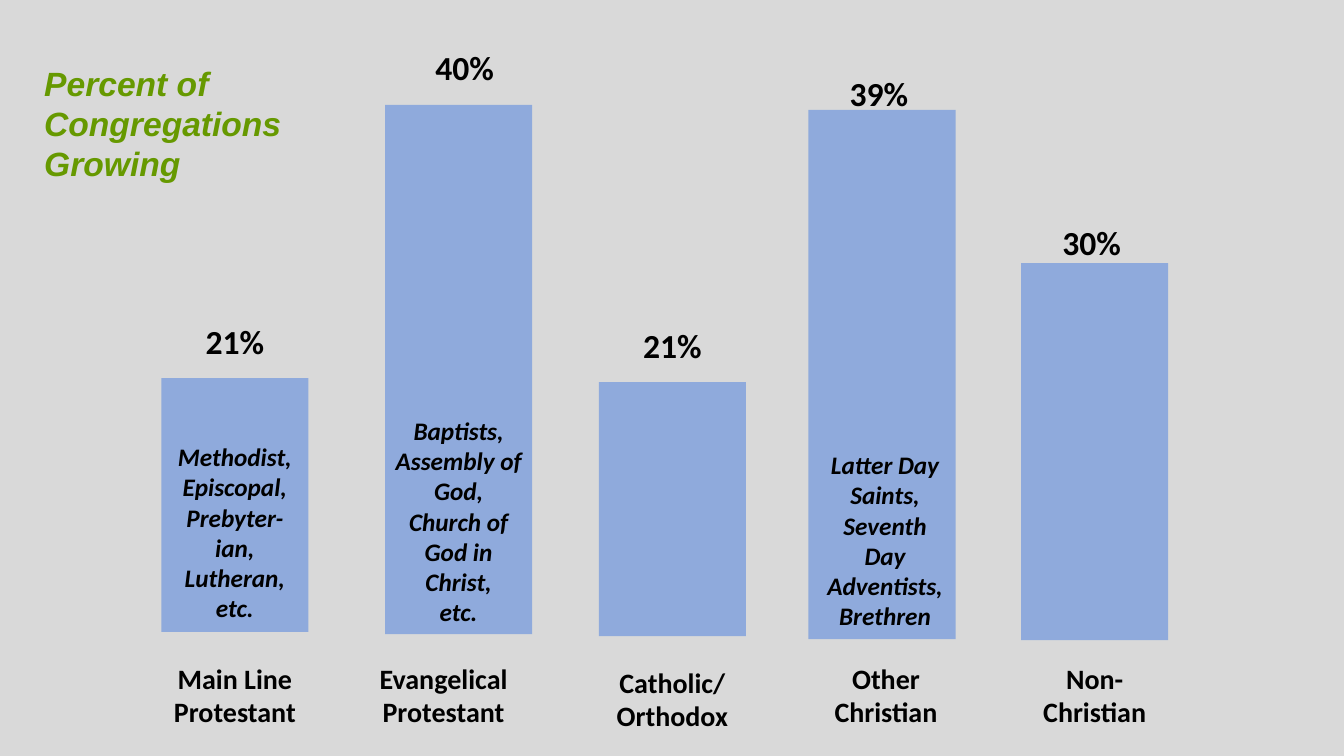
from dataclasses import dataclass

from pptx import Presentation
from pptx.dml.color import RGBColor
from pptx.enum.shapes import MSO_SHAPE as Shape
from pptx.enum.text import MSO_ANCHOR as Anchor, PP_ALIGN as Align
from pptx.util import Inches, Pt


@dataclass(frozen=True)
class Theme:
    page: str = "D9D9D9"
    bar: str = "8FAADC"
    title: str = "669900"
    ink: str = "000000"
    body_font: str = "Calibri"
    title_font: str = "Arial"
    large: int = 24
    medium: int = 20
    small: int = 18


@dataclass(frozen=True)
class Box:
    """Left, width in columns; top, height in rows."""
    left: float
    top: float
    width: float
    height: float

    def emu(self):
        return (round(self.left * COLUMN), round(self.top * ROW),
                round(self.width * COLUMN), round(self.height * ROW))


@dataclass(frozen=True)
class Group:
    """A bar with its value, name and member churches; shifts are in columns."""
    value: str
    name: tuple
    bar: Box
    value_shift: float = 0
    value_rise: float = 2.48
    name_shift: float = 0
    name_top: float = 26.04
    name_width: float = 4.38
    members: tuple = ()
    members_shift: float = 0
    members_lift: float = 0
    members_lines: int = 6


THEME = Theme()
WIDTH, HEIGHT = Inches(13.33), Inches(7.5)
COLUMN, ROW = WIDTH / 40, HEIGHT / 30
BAR_WIDTH = 4.38
VALUE_HEIGHT, NAME_HEIGHT = 2, 3.08
MEMBER_LINE, MEMBER_PADDING = 1.2, 0.48

TITLE_BOX = Box(1.02, 2.28, 10.35, 7.68)
TITLE = ("Percent of Congregations", "Growing")
GROUPS = (
    Group("21%", ("Main Line Protestant",), Box(4.8, 15, BAR_WIDTH, 10.08),
          members=("Methodist,", "Episcopal,", "Prebyter-\vian,", "Lutheran,", "etc."),
          members_lift=0.08),
    Group("40%", ("Evangelical", "Protestant"), Box(11.46, 4.16, BAR_WIDTH, 21),
          value_shift=0.18, name_shift=-0.75, name_width=4.98,
          members=("Baptists,", "Assembly of God,", "Church of God in Christ,", "etc."),
          members_lines=7),
    Group("21%", ("Catholic/ Orthodox",), Box(17.82, 15.16, BAR_WIDTH, 10.08),
          name_top=26.2),
    Group("39%", ("Other Christian",), Box(24.06, 4.36, BAR_WIDTH, 21),
          value_shift=-0.09, value_rise=1.68, name_shift=0.12,
          members=("Latter Day Saints,", "Seventh Day Adventists,", "Brethren"),
          members_shift=0.09, members_lift=0.04),
    Group("30%", ("Non-Christian",), Box(30.39, 10.44, BAR_WIDTH, 14.96),
          value_shift=-0.09, value_rise=1.84),
)


def add_text(page, box, lines, size, color=THEME.ink, font=THEME.body_font,
             italic=False, align=Align.CENTER):
    frame = page.shapes.add_textbox(*box.emu()).text_frame
    frame.word_wrap = True
    frame.vertical_anchor = Anchor.TOP
    look = {"name": font, "size": Pt(size), "bold": True, "italic": italic}
    for index, line in enumerate(lines):
        para = frame.add_paragraph() if index else frame.paragraphs[0]
        para.text = line
        para.alignment = align
        for span in para.runs:
            for key, value in look.items():
                setattr(span.font, key, value)
            span.font.color.rgb = RGBColor.from_string(color)


def add_bar(page, box):
    bar = page.shapes.add_shape(Shape.RECTANGLE, *box.emu())
    bar.shadow.inherit = False
    bar.fill.solid()
    bar.fill.fore_color.rgb = RGBColor.from_string(THEME.bar)
    bar.line.fill.background()


def add_group(page, group):
    bar = group.bar
    add_bar(page, bar)
    add_text(page, Box(bar.left + group.name_shift, group.name_top,
                       group.name_width, NAME_HEIGHT), group.name, THEME.medium)
    add_text(page, Box(bar.left + group.value_shift, bar.top - group.value_rise,
                       bar.width, VALUE_HEIGHT), [group.value], THEME.large)
    if group.members:
        height = group.members_lines * MEMBER_LINE + MEMBER_PADDING
        top = bar.top + bar.height - group.members_lift - height
        add_text(page, Box(bar.left + group.members_shift, top, bar.width, height),
                 group.members, THEME.small, italic=True)


def add_title(page, box):
    add_text(page, box, TITLE, THEME.large, THEME.title, THEME.title_font,
             italic=True, align=Align.LEFT)


def main():
    deck = Presentation()
    deck.slide_width, deck.slide_height = WIDTH, HEIGHT
    page = deck.slides.add_slide(deck.slide_layouts[6])
    page.background.fill.solid()
    page.background.fill.fore_color.rgb = RGBColor.from_string(THEME.page)
    for group in GROUPS:
        add_group(page, group)
    add_title(page, TITLE_BOX)
    deck.save("out.pptx")


if __name__ == "__main__":
    main()
